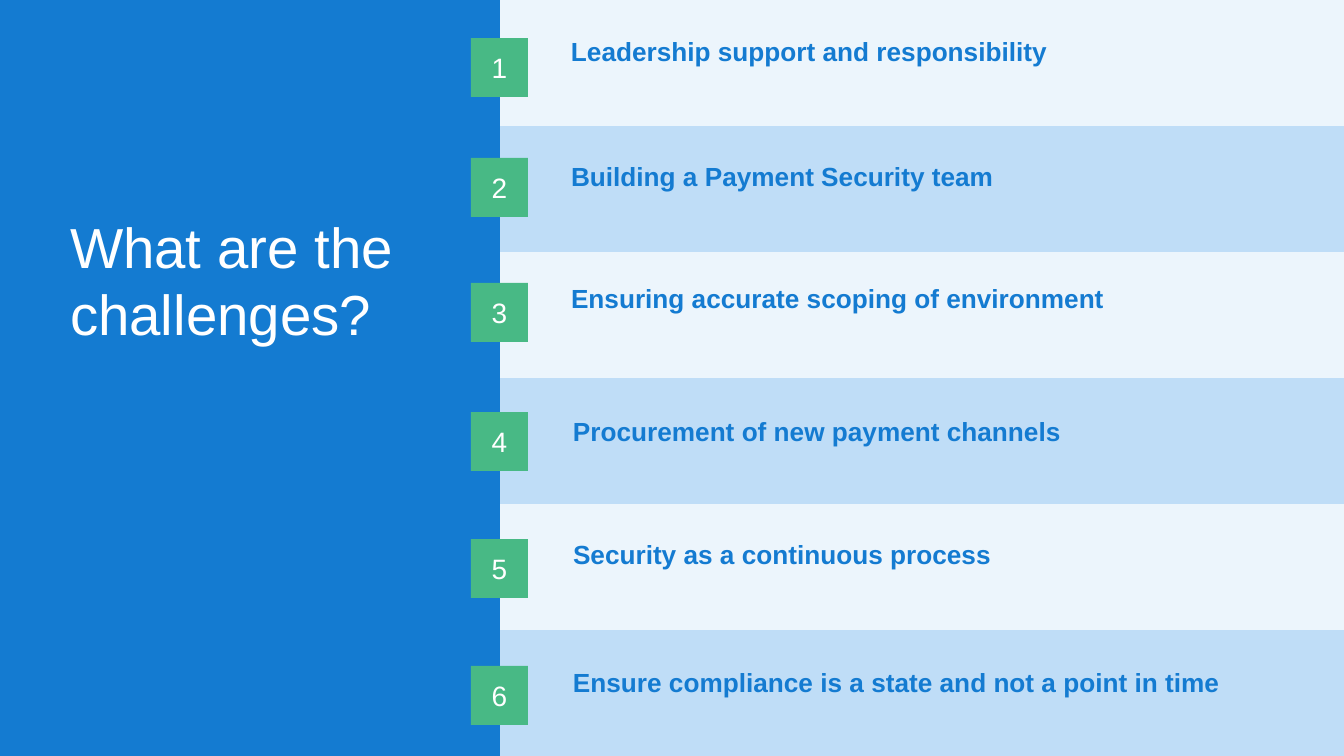
from dataclasses import dataclass

from pptx import Presentation
from pptx.dml.color import RGBColor as Rgb
from pptx.enum.shapes import MSO_SHAPE as Shape
from pptx.enum.text import MSO_ANCHOR as Anchor, MSO_AUTO_SIZE as AutoSize, PP_ALIGN as Align
from pptx.util import Emu, Pt


@dataclass(frozen=True)
class Theme:
    """Colours, typeface and type sizes of the slide."""
    blue: str = "147BD1"
    pale: str = "ECF5FC"
    sky: str = "BFDDF7"
    green: str = "48B985"
    white: str = "FFFFFF"
    face: str = "Arial"
    title: float = 40.3
    number: float = 20
    label: float = 18.7


class SlideBuilder:
    """Draws styled elements on one slide, measured in px."""

    SCALE = 12192000 / 1344

    def __init__(self, page, theme):
        """Keep the slide and its theme."""
        self.page = page
        self.theme = theme

    @classmethod
    def px(cls, length):
        """Turn px into EMU."""
        return Emu(round(length * cls.SCALE))

    def add_text(self, box, text, size, color, bold=False, align=Align.LEFT, inset=13):
        """Set one formatted run in a shape and return its paragraph."""
        frame = box.text_frame
        frame.word_wrap = True
        frame.margin_left = frame.margin_right = self.px(inset)
        frame.margin_top = frame.margin_bottom = self.px(inset)
        para = frame.paragraphs[0]
        para.alignment = align
        span = para.add_run()
        span.text = text
        span.font.name = self.theme.face
        span.font.size = Pt(size)
        span.font.bold = bold
        span.font.color.rgb = Rgb.from_string(color)
        return para

    def block(self, left, top, width, height, color):
        """Add a plain filled rectangle."""
        box = self.page.shapes.add_shape(
            Shape.RECTANGLE, *map(self.px, (left, top, width, height)))
        box.shadow.inherit = False
        box.fill.solid()
        box.fill.fore_color.rgb = Rgb.from_string(color)
        box.line.fill.background()
        return box

    def title(self, text, left, top, width, height):
        """Place the title placeholder above the shapes drawn so far."""
        box = self.page.shapes.title
        self.page.shapes.element.append(box.element)
        box.left, box.top, box.width, box.height = map(self.px, (left, top, width, height))
        self.add_text(box, text, self.theme.title, self.theme.white, inset=10)
        frame = box.text_frame
        frame.margin_top = frame.margin_bottom = self.px(5)
        frame.vertical_anchor = Anchor.MIDDLE
        frame.auto_size = AutoSize.NONE

    def badge(self, number, left, top):
        """Add a green numbered square."""
        box = self.block(left, top, 57, 59, self.theme.green)
        box.text_frame.vertical_anchor = Anchor.MIDDLE
        self.add_text(box, str(number), self.theme.number, self.theme.white, align=Align.CENTER)

    def label(self, text, left, top, width):
        """Add a bold challenge label."""
        box = self.page.shapes.add_textbox(*map(self.px, (left, top, width, 63)))
        para = self.add_text(box, text, self.theme.label, self.theme.blue, bold=True)
        para.line_spacing = 1.15
        box.text_frame.auto_size = AutoSize.SHAPE_TO_FIT_TEXT


CHALLENGES = [
    ("Leadership support and responsibility", 38, 558, 18, 753),
    ("Building a Payment Security team", 158, 558, 143, 767),
    ("Ensuring accurate scoping of environment", 283, 558, 265, 725),
    ("Procurement of new payment channels", 412, 560, 398, 783),
    ("Security as a continuous process", 539, 560, 521, 455),
    ("Ensure compliance is a state and not a point in time", 666, 560, 649, 744),
]


def main():
    """Build and save the challenges slide."""
    deck = Presentation()
    deck.slide_width, deck.slide_height = map(SlideBuilder.px, (1344, 756))
    theme = Theme()
    builder = SlideBuilder(deck.slides.add_slide(deck.slide_layouts[5]), theme)

    band_height = 756 // len(CHALLENGES)
    for index in range(len(CHALLENGES)):
        color = theme.sky if index % 2 else theme.pale
        builder.block(500, index * band_height, 844, band_height, color)
    builder.block(0, 0, 500, 756, theme.blue)
    builder.title("What are the challenges?", 60, 143, 407, 273)

    for number, (text, badge_top, left, top, width) in enumerate(CHALLENGES, 1):
        builder.badge(number, 471, badge_top)
        builder.label(text, left, top, width)

    deck.save("out.pptx")


if __name__ == "__main__":
    main()
